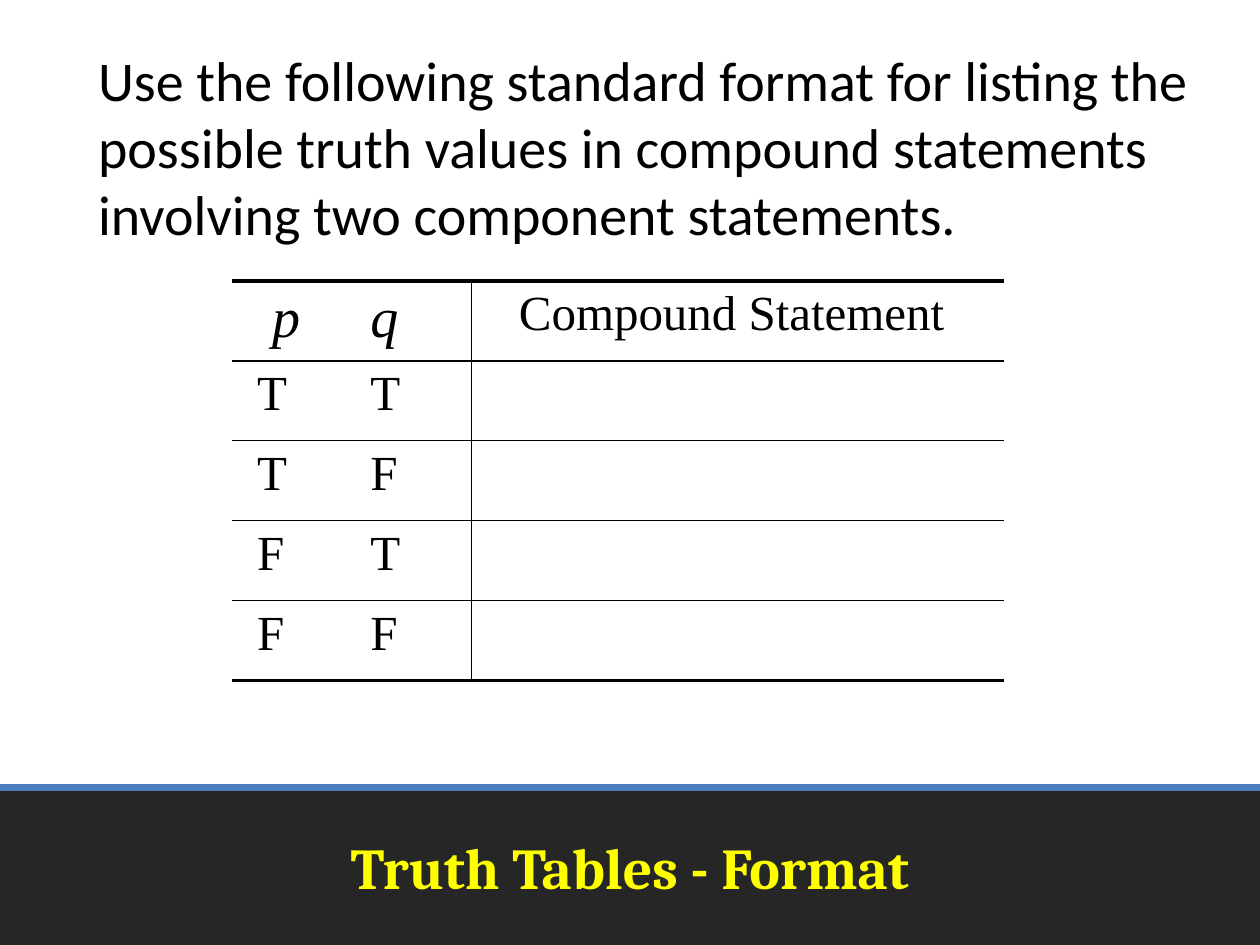
import pptx
import pptx.dml.color
import pptx.enum.shapes
import pptx.enum.text
import pptx.oxml
import pptx.util
from lxml import etree

ALIGN = pptx.enum.text.PP_ALIGN
ANCHOR = pptx.enum.text.MSO_ANCHOR
SHAPES = pptx.enum.shapes
DRAWING = "http://schemas.openxmlformats.org/drawingml/2006/main"
WIDTH, HEIGHT = 10, 7.5
VALUE_PAIRS = [("T", "T"), ("T", "F"), ("F", "T"), ("F", "F")]
THICK, THIN = 2.25, 1


def inches(*lengths):
    """Turn numbers into lengths in inches."""
    return [pptx.util.Inches(length) for length in lengths]


def color(hex_code):
    """Turn a hex string into a colour."""
    return pptx.dml.color.RGBColor.from_string(hex_code)


def element(parent, tag, **attributes):
    """Append a drawing element to its parent."""
    child = etree.SubElement(parent, f"{{{DRAWING}}}{tag}")
    for key, value in attributes.items():
        child.set(key, str(value))
    return child


def write(frame, text, font="Times New Roman", size=28, hex_code="000000",
          bold=False, italic=False, align=ALIGN.LEFT, tabs=()):
    """Write one formatted paragraph with optional tab stops."""
    paragraph = frame.paragraphs[0]
    paragraph.alignment = align
    run = paragraph.add_run()
    run.text = text
    run.font.name = font
    run.font.size = pptx.util.Pt(size)
    run.font.bold = bold
    run.font.italic = italic
    run.font.color.rgb = color(hex_code)
    if tabs:
        stops = element(paragraph._p.get_or_add_pPr(), "tabLst")
        for position in tabs:
            element(stops, "tab", pos=pptx.util.Inches(position), algn="l")


def add_text(slide, box, text, anchor=ANCHOR.TOP, **style):
    """Place a wrapping text box."""
    frame = slide.shapes.add_textbox(*inches(*box)).text_frame
    frame.word_wrap = True
    frame.vertical_anchor = anchor
    write(frame, text, **style)


def style_cell(cell, **borders):
    """Clear the fill and draw the given borders, in points."""
    properties = cell._tc.get_or_add_tcPr()
    for side in "LRTB":
        weight = borders.get(side, 0)
        line = element(properties, f"ln{side}", w=pptx.util.Pt(weight))
        if weight:
            element(element(line, "solidFill"), "srgbClr", val="000000")
        else:
            element(line, "noFill")
    cell.fill.background()


def add_truth_table(slide, box):
    """Draw the ruled truth table inside its box."""
    left, top, width, height = box
    row_count = len(VALUE_PAIRS) + 1
    table = slide.shapes.add_table(row_count, 2, *inches(*box)).table
    table.first_row = table.horz_banding = False
    for column, share in zip(table.columns, (0.31, 0.69)):
        column.width = pptx.util.Inches(width * share)
    for row in table.rows:
        row.height = pptx.util.Inches(height / row_count)

    write(table.cell(0, 0).text_frame, "\tp\tq", size=32, italic=True,
          tabs=(0.22, 1))
    write(table.cell(0, 1).text_frame, "Compound Statement ",
          align=ALIGN.CENTER)
    for index, (p_value, q_value) in enumerate(VALUE_PAIRS, 1):
        write(table.cell(index, 0).text_frame, f"\t{p_value}\t{q_value}",
              tabs=(0.1, 1))

    for index in range(row_count):
        upper = THICK if index == 0 else THIN
        lower = THICK if index == row_count - 1 else THIN
        style_cell(table.cell(index, 0), R=THIN, T=upper, B=lower)
        style_cell(table.cell(index, 1), L=THIN, T=upper, B=lower)


def add_title_band(slide, box):
    """Draw the dark band with its top rule and title."""
    left, top, width, height = box
    band = slide.shapes.add_shape(SHAPES.MSO_SHAPE.RECTANGLE, *inches(*box))
    band.shadow.inherit = False
    band.fill.solid()
    band.fill.fore_color.rgb = color("262626")
    band.line.fill.background()
    rule = slide.shapes.add_connector(SHAPES.MSO_CONNECTOR.STRAIGHT,
                                      *inches(left, top, left + width, top))
    rule.line.color.rgb = color("4B7EBC")
    rule.line.width = pptx.util.Pt(4)
    element(rule._element.spPr, "effectLst")
    margin = width * 0.05
    add_text(slide, (left + margin, top, width - 2 * margin, height),
             "Truth Tables - Format", anchor=ANCHOR.MIDDLE, font="Cambria",
             size=33, hex_code="FFFF00", bold=True, align=ALIGN.CENTER)


def main():
    """Build and save the slide."""
    deck = pptx.Presentation()
    deck.slide_width, deck.slide_height = inches(WIDTH, HEIGHT)
    slide = deck.slides.add_slide(deck.slide_layouts[6])
    add_title_band(slide, (0, HEIGHT * 5 / 6, WIDTH, HEIGHT / 6))
    add_text(slide, (0.68, 0.31, 8.92, 1.7),
             "Use the following standard format for listing the possible "
             "truth values in compound statements involving two component "
             "statements.", font="Calibri", size=32)
    add_truth_table(slide, (1.84, 2.23, 6.13, 3.17))
    deck.save("out.pptx")


if __name__ == "__main__":
    main()
